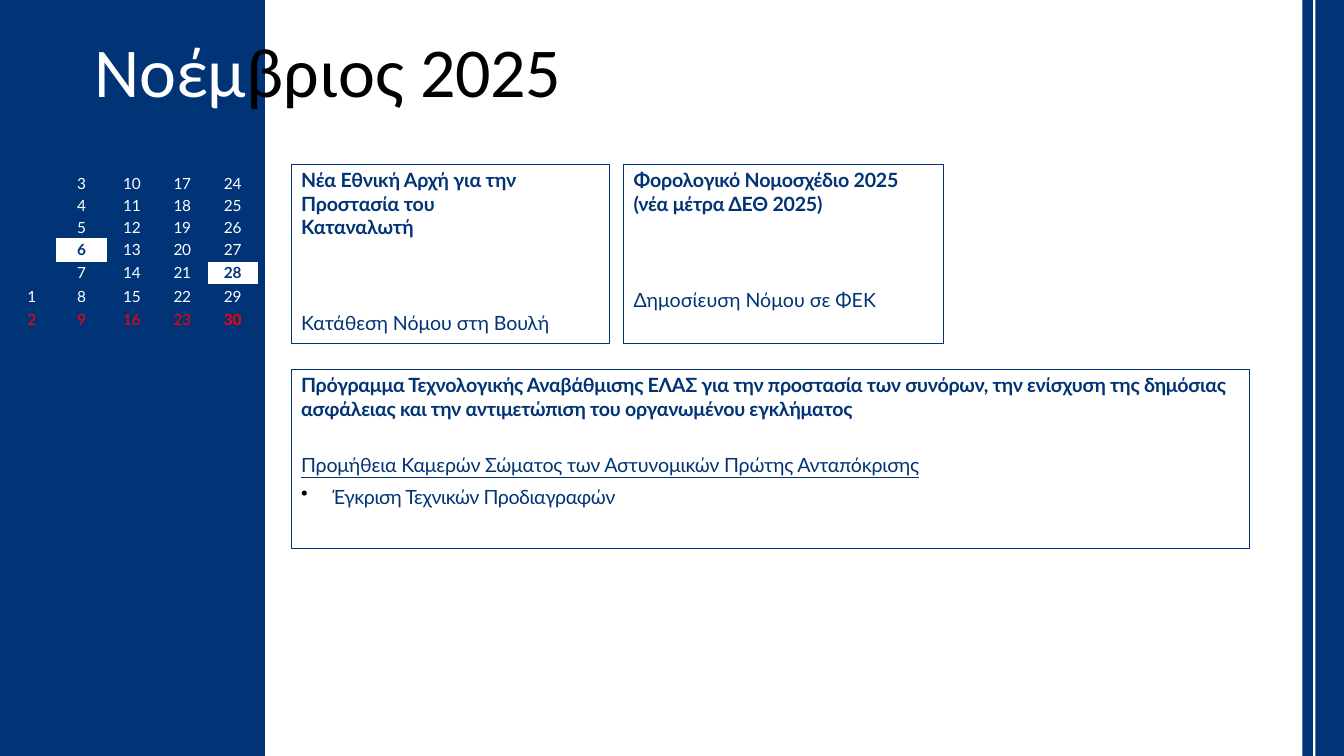
from lxml import etree
from pptx import Presentation
from pptx.dml.color import RGBColor
from pptx.enum import shapes, text
from pptx.oxml import ns
from pptx.util import Cm, Pt

NAVY, WHITE, RED, BLACK = "003476", "FFFFFF", "FF0000", "000000"
NO_STYLE = "{2D5ABB26-0587-4C30-8999-92F81FD0307C}"

# Title: (text, colour, tracking in points)
TITLE = [("Νοέμ", WHITE, 0), ("βριος ", BLACK, 0), ("2025", BLACK, -0.2)]

# Calendar: one row per weekday, one column per week
ROW_HEIGHTS = [0.56, 0.58, 0.51, 0.61, 0.56, 0.63, 0.53]
COLUMN_WIDTHS = [0.81, 1.27, 1.27, 1.27, 1.27]
FIRST_ROW = 5  # the month starts on a Saturday
EVENT_DAYS = {6, 28}
BOLD_DAYS = EVENT_DAYS | {30}

# Bands: left, width
LEFT_BAND = (0, 6.68)
RIGHT_BANDS = [(32.82, 0.27), (33.15, 0.72)]

# Boxes: left, top, width, paragraphs
# Paragraph: text, kind, space before, right margin, tracking
BOX_HEIGHT = 4.52
BOXES = [
    (7.34, 4.14, 8.03, [
        ("Νέα Εθνική Αρχή για την Προστασία του Καταναλωτή", "heading", 2.5, 1.9, -0.15),
        ("Κατάθεση Νόμου στη Βουλή", "plain", 51.7, 0, -0.08),
    ]),
    (7.34, 9.3, 24.16, [
        ("Πρόγραμμα Τεχνολογικής Αναβάθμισης ΕΛΑΣ για την προστασία των συνόρων, "
         "την ενίσχυση της δημόσιας ασφάλειας και την αντιμετώπιση του οργανωμένου "
         "εγκλήματος", "heading", 2.6, 0, -0.22),
        ("Προμήθεια Καμερών Σώματος των Αστυνομικών Πρώτης Ανταπόκρισης",
         "underlined", 23.2, 0, -0.18),
        ("Έγκριση Τεχνικών Προδιαγραφών", "bullet", 6, 0, -0.35),
    ]),
    (15.72, 4.14, 8.05, [
        ("Φορολογικό Νομοσχέδιο 2025 (νέα μέτρα ΔΕΘ 2025)", "heading", 2.5, 0.8, -0.2),
        ("Δημοσίευση Νόμου σε ΦΕΚ", "plain", 51.7, 0, -0.03),
    ]),
]


def rgb(value):
    return RGBColor.from_string(value)


def add_span(para, words, font, size, color, bold=False, tracking=0.0):
    span = para.add_run()
    span.text = words
    span.font.name, span.font.size, span.font.bold = font, Pt(size), bold
    span.font.color.rgb = rgb(color)
    if tracking:
        span.font._element.set("spc", str(round(tracking * 100)))
    return span


def set_margins(part, left=0.0, top=0.0):
    part.margin_left, part.margin_top = Cm(left), Cm(top)
    part.margin_right = part.margin_bottom = 0


def add_rectangle(page, left, top, width, height):
    box = page.shapes.add_shape(shapes.MSO_SHAPE.RECTANGLE,
                                Cm(left), Cm(top), Cm(width), Cm(height))
    box.shadow.inherit = False
    return box


def add_band(page, left, width):
    band = add_rectangle(page, left, 0, width, 19.05)
    band.fill.solid()
    band.fill.fore_color.rgb = rgb(NAVY)
    band.line.fill.background()


def add_calendar(page):
    frame = page.shapes.add_table(
        len(ROW_HEIGHTS), len(COLUMN_WIDTHS), Cm(0.61), Cm(4.34),
        Cm(sum(COLUMN_WIDTHS)), Cm(sum(ROW_HEIGHTS)))
    table = frame.table
    table.first_row = table.horz_banding = False
    table._tbl.tblPr.find(ns.qn("a:tableStyleId")).text = NO_STYLE
    for column, width in zip(table.columns, COLUMN_WIDTHS):
        column.width = Cm(width)
    for row, height in enumerate(ROW_HEIGHTS):
        table.rows[row].height = Cm(height)
        for week in range(len(COLUMN_WIDTHS)):
            fill_day(table.cell(row, week), row, week)


def fill_day(cell, row, week):
    day = 7 * week + row - FIRST_ROW + 1
    event = day in EVENT_DAYS
    set_margins(cell, left=0 if week else 0.08)
    cell.vertical_anchor = text.MSO_ANCHOR.MIDDLE
    cell.fill.solid()
    cell.fill.fore_color.rgb = rgb(WHITE if event else NAVY)
    para = cell.text_frame.paragraphs[0]
    para.alignment = text.PP_ALIGN.CENTER if week else text.PP_ALIGN.LEFT
    if day < 1:  # keep the empty cell as low as its row
        etree.SubElement(para._p, ns.qn("a:endParaRPr"), sz="1100")
        return
    sunday = row == len(ROW_HEIGHTS) - 1
    color = NAVY if event else RED if sunday else WHITE
    add_span(para, str(day), "Lato", 11, color, day in BOLD_DAYS, -0.2)


def add_title(page):
    title = page.shapes.title
    title.left, title.top, title.width, title.height = Cm(2.34), Cm(0.64), Cm(13.36), Cm(2.18)
    frame = title.text_frame
    set_margins(frame, left=0.03, top=0.03)
    frame.auto_size = text.MSO_AUTO_SIZE.NONE
    frame.vertical_anchor = text.MSO_ANCHOR.MIDDLE
    para = frame.paragraphs[0]
    para.alignment = text.PP_ALIGN.LEFT
    para.space_before = Pt(1.1)
    for words, color, tracking in TITLE:
        add_span(para, words, "Calibri", 50, color, tracking=tracking)
    page.shapes._spTree.append(title._element)  # in front of the left band


def add_box(page, left, top, width, paragraphs):
    box = add_rectangle(page, left, top, width, BOX_HEIGHT)
    box.fill.background()
    box.line.color.rgb = rgb(NAVY)
    box.line.width = Pt(0.75)
    frame = box.text_frame
    frame.word_wrap = True
    frame.vertical_anchor = text.MSO_ANCHOR.TOP
    set_margins(frame, top=0.1)
    for index, (words, kind, before, right, tracking) in enumerate(paragraphs):
        para = frame.add_paragraph() if index else frame.paragraphs[0]
        para.alignment = text.PP_ALIGN.LEFT
        para.space_before = Pt(before)
        span = add_span(para, words, "Lato", 14, NAVY, kind == "heading", tracking)
        span.font.underline = kind == "underlined"
        props = para._p.get_or_add_pPr()
        props.set("marL", str(Cm(1.04 if kind == "bullet" else 0.25)))
        props.set("marR", str(Cm(right)))
        if kind == "bullet":
            props.set("indent", str(Cm(-0.79)))
            tint = etree.SubElement(props, ns.qn("a:buClr"))
            etree.SubElement(tint, ns.qn("a:srgbClr"), val=BLACK)
            etree.SubElement(props, ns.qn("a:buChar"), char="•")


def main():
    deck = Presentation()
    deck.slide_width, deck.slide_height = Cm(33.87), Cm(19.05)
    page = deck.slides.add_slide(deck.slide_layouts[5])
    add_band(page, *LEFT_BAND)
    add_calendar(page)
    add_title(page)
    for band in RIGHT_BANDS:
        add_band(page, *band)
    for box in BOXES:
        add_box(page, *box)
    deck.save("out.pptx")


if __name__ == "__main__":
    main()
